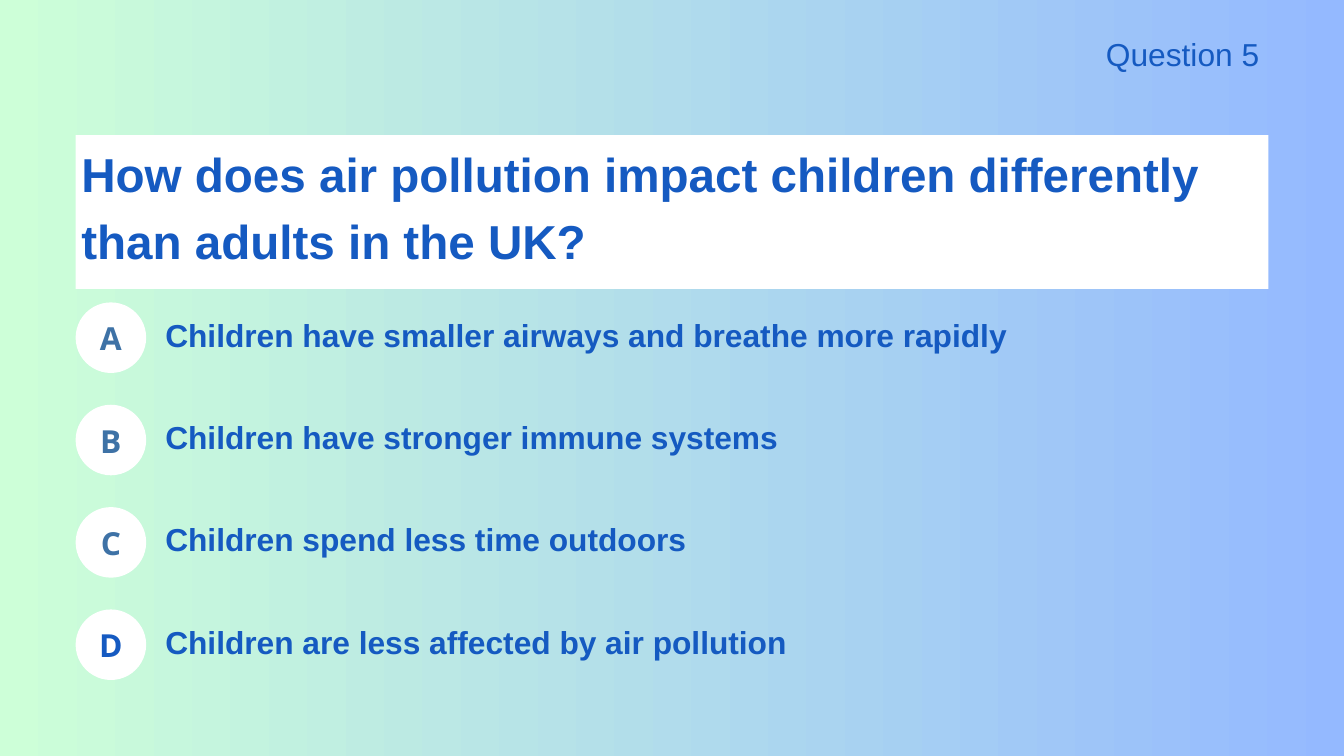
from dataclasses import dataclass

from pptx import Presentation
from pptx.dml.color import RGBColor as RGB
from pptx.enum.shapes import MSO_SHAPE as Shape
from pptx.enum.text import MSO_ANCHOR as Anchor, MSO_AUTO_SIZE as AutoSize, PP_ALIGN as Align
from pptx.util import Inches, Pt


@dataclass(frozen=True)
class Theme:
    mint: RGB = RGB.from_string("CDFFD8")
    sky: RGB = RGB.from_string("94B9FF")
    white: RGB = RGB.from_string("FFFFFF")
    blue: RGB = RGB.from_string("155AC1")
    steel: RGB = RGB.from_string("3E72A6")
    text_font: str = "Arial"
    letter_font: str = "Open Sans"
    title_size: int = 51
    body_size: int = 34
    line_factor: float = 1.4


THEME = Theme()
WIDTH, HEIGHT = 20, 11.25
MARGIN = 1.125
BADGE = 1.05
ANSWER_LEFT = 2.46
FIRST_ROW, ROW_STEP = 4.5, 1.523
LINE_HEIGHT = 0.71

QUESTION = "How does air pollution impact children differently than adults in the UK?"
ANSWERS = [
    ("A", "Children have smaller airways and breathe more rapidly", THEME.steel),
    ("B", "Children have stronger immune systems", THEME.steel),
    ("C", "Children spend less time outdoors", THEME.steel),
    ("D", "Children are less affected by air pollution", THEME.blue),
]


def write(shape, text, size=THEME.body_size, font=THEME.text_font, color=THEME.blue,
          bold=True, align=Align.LEFT, anchor=Anchor.TOP, bottom_inset=0):
    frame = shape.text_frame
    frame.text = text
    frame.word_wrap = True
    frame.auto_size = AutoSize.NONE
    frame.vertical_anchor = anchor
    frame.margin_left = frame.margin_top = frame.margin_right = 0
    frame.margin_bottom = Inches(bottom_inset)
    paragraph = frame.paragraphs[0]
    paragraph.alignment = align
    paragraph.line_spacing = Pt(size * THEME.line_factor)
    paragraph.space_before = Pt(0)
    run_font = paragraph.runs[0].font
    run_font.name, run_font.size, run_font.bold = font, Pt(size), bold
    run_font.color.rgb = color


def add_white_shape(slide, kind, left, top, width, height):
    shape = slide.shapes.add_shape(kind, *map(Inches, (left, top, width, height)))
    shape.shadow.inherit = False
    shape.fill.solid()
    shape.fill.fore_color.rgb = THEME.white
    shape.line.fill.background()
    return shape


def add_text(slide, text, left, top, width, **style):
    box = slide.shapes.add_textbox(*map(Inches, (left, top, width, LINE_HEIGHT)))
    write(box, text, **style)


def set_background(slide):
    fill = slide.background.fill
    fill.gradient()
    fill.gradient_angle = 0
    for stop, color, position in zip(fill.gradient_stops, (THEME.mint, THEME.sky), (0, 1)):
        stop.color.rgb = color
        stop.position = position


def add_question(slide):
    """Place the title on a white panel that lies behind it."""
    panel = add_white_shape(slide, Shape.RECTANGLE, MARGIN, 2.01, WIDTH - 2 * MARGIN, 2.29)
    title = slide.shapes.title
    title.element.addprevious(panel.element)
    title.left, title.top, title.width, title.height = map(Inches, (1.21, 2.02, 17.59, 2.06))
    write(title, QUESTION, size=THEME.title_size)


def add_answer(slide, row, letter, answer, letter_color):
    top = FIRST_ROW + row * ROW_STEP
    badge = add_white_shape(slide, Shape.OVAL, MARGIN, top, BADGE, BADGE)
    write(badge, letter, font=THEME.letter_font, color=letter_color,
          align=Align.CENTER, anchor=Anchor.MIDDLE, bottom_inset=0.08)
    add_text(slide, answer, ANSWER_LEFT, top + 0.1, WIDTH - ANSWER_LEFT)


def main():
    presentation = Presentation()
    presentation.slide_width, presentation.slide_height = Inches(WIDTH), Inches(HEIGHT)
    slide = presentation.slides.add_slide(presentation.slide_layouts.get_by_name("Title Only"))
    set_background(slide)
    add_question(slide)
    add_text(slide, "Question 5", 11.58, 0.43, 7.16, bold=False, align=Align.RIGHT)
    for row, (letter, answer, letter_color) in enumerate(ANSWERS):
        add_answer(slide, row, letter, answer, letter_color)
    presentation.save("out.pptx")


if __name__ == "__main__":
    main()
